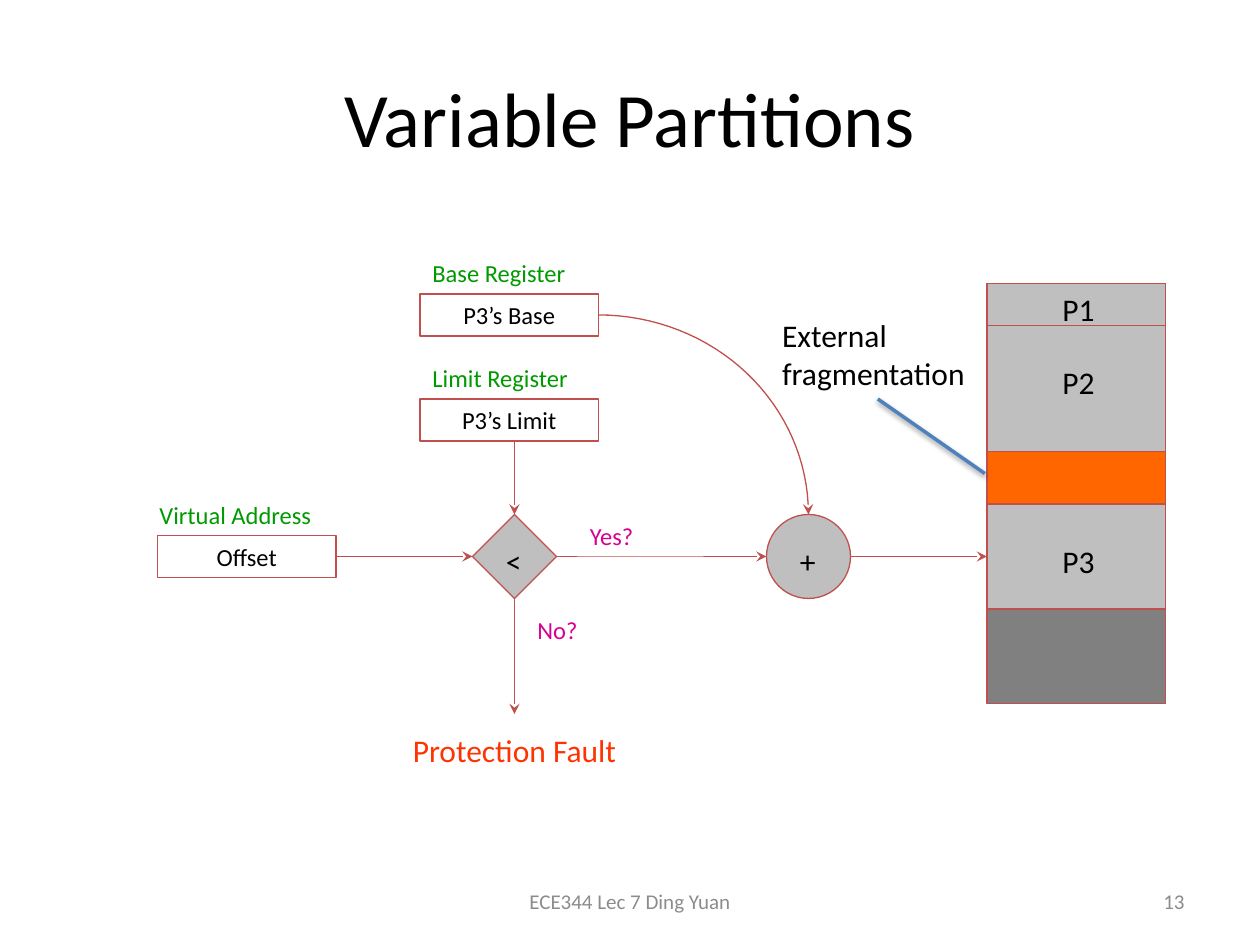
"""Builds a slide that explains variable partitions with base and limit registers."""
from math import cos, pi, sin

from lxml.etree import SubElement
from pptx import Presentation
from pptx.dml.color import RGBColor
from pptx.enum.shapes import MSO_CONNECTOR as Connector, MSO_SHAPE as Shape
from pptx.enum.text import MSO_ANCHOR as Anchor, PP_ALIGN as Align
from pptx.oxml.ns import qn
from pptx.util import Inches, Pt

COLORS = {
    "black": "000000", "white": "FFFFFF", "outline": "C0504D", "pointer": "4F81BD",
    "used": "BFBFBF", "free": "808080", "fragment": "FF6600", "register": "009900",
    "branch": "D60093", "fault": "FF3300", "footer": "8C8C8C",
}
COLUMNS, ROWS = 120, 90
WIDTH, HEIGHT = Inches(10), Inches(7.5)


class Diagram:
    """Holds the style and the slide; lengths are columns and rows of the grid."""

    font = "Calibri"
    line_width = Pt(0.75)

    def __init__(self, presentation):
        self.slide = presentation.slides.add_slide(presentation.slide_layouts[5])
        self.shapes = self.slide.shapes

    def x(self, columns):
        return round(WIDTH * columns / COLUMNS)

    def y(self, rows):
        return round(HEIGHT * rows / ROWS)

    def frame(self, left, top, width, height):
        return self.x(left), self.y(top), self.x(width), self.y(height)

    def color(self, name):
        return RGBColor.from_string(COLORS[name])

    def set_text(self, shape, text, size, color="black", align=Align.LEFT, anchor=Anchor.TOP, wrap=True):
        text_frame = shape.text_frame
        text_frame.text = text
        text_frame.word_wrap = wrap
        text_frame.vertical_anchor = anchor
        for paragraph in text_frame.paragraphs:
            paragraph.alignment = align
            paragraph.font.name = self.font
            paragraph.font.size = Pt(size)
            paragraph.font.color.rgb = self.color(color)

    def title(self, text):
        placeholder = self.shapes.title
        placeholder.left, placeholder.top, placeholder.width, placeholder.height = self.frame(6, 3.6, 108, 15)
        self.set_text(placeholder, text, 44, align=Align.CENTER, anchor=Anchor.MIDDLE)

    def label(self, frame, text, size=18, **style):
        self.set_text(self.shapes.add_textbox(*self.frame(*frame)), text, size, **style)

    def box(self, frame, fill="white", outlined=True, kind=Shape.RECTANGLE):
        shape = self.shapes.add_shape(kind, *self.frame(*frame))
        shape.shadow.inherit = False
        shape.fill.solid()
        shape.fill.fore_color.rgb = self.color(fill)
        if outlined:
            self.stroke(shape)
        else:
            shape.line.fill.background()
        return shape

    def register(self, left, top, text):
        self.set_text(self.box((left, top, 17, 4)), text, 14, align=Align.CENTER)

    def caption(self, frame, text, color, size=14, align=Align.LEFT):
        self.set_text(self.box(frame, outlined=False), text, size, color, align)

    def stroke(self, shape, color="outline", width=None):
        shape.line.color.rgb = self.color(color)
        shape.line.width = width or self.line_width

    def arrowhead(self, shape):
        outline = shape._element.spPr.find(qn("a:ln"))
        SubElement(outline, qn("a:tailEnd"), type="stealth")

    def connector(self, start, end, color="outline", width=None):
        line = self.shapes.add_connector(
            Connector.STRAIGHT, self.x(start[0]), self.y(start[1]), self.x(end[0]), self.y(end[1]))
        self.stroke(line, color, width)
        return line, SubElement(line._element.spPr, qn("a:effectLst"))

    def arrow(self, start, end):
        line, _ = self.connector(start, end)
        self.arrowhead(line)

    def pointer(self, start, end):
        _, effects = self.connector(start, end, "pointer", Pt(2))
        shadow = SubElement(effects, qn("a:outerShdw"), blurRad="40000", dist="20000",
                            dir="5400000", rotWithShape="0")
        black = SubElement(shadow, qn("a:srgbClr"), val=COLORS["black"])
        SubElement(black, qn("a:alpha"), val="38000")

    def curved_arrow(self, start, end, steps=32):
        (left, top), (right, bottom) = start, end
        angles = [pi / 2 * step / steps for step in range(1, steps + 1)]
        points = [(self.x(left + (right - left) * sin(angle)), self.y(bottom - (bottom - top) * cos(angle)))
                  for angle in angles]
        builder = self.shapes.build_freeform(self.x(left), self.y(top))
        builder.add_line_segments(points, close=False)
        curve = builder.convert_to_shape()
        curve.shadow.inherit = False
        curve.fill.background()
        self.stroke(curve)
        self.arrowhead(curve)


def main():
    presentation = Presentation()
    presentation.slide_width, presentation.slide_height = WIDTH, HEIGHT
    diagram = Diagram(presentation)
    diagram.title("Variable Partitions")
    diagram.label((41, 83.4, 38, 4.8), "ECE344 Lec 7 Ding Yuan", 12, color="footer",
                  align=Align.CENTER, anchor=Anchor.MIDDLE)
    diagram.label((86, 83.4, 28, 4.8), "13", 12, color="footer", align=Align.RIGHT, anchor=Anchor.MIDDLE)

    for top, height, fill in ((31, 12, "used"), (43, 8, "fragment"), (48, 10, "used"),
                              (58, 9, "free"), (27, 4, "used")):
        diagram.box((94, top, 17, height), fill)
    for top, name in ((27, "P1"), (34, "P2"), (51, "P3")):
        diagram.label((100, top, 6, 4.4), name)

    for left, top, indent, name, value in ((40, 28, 0, "Base Register", "P3’s Base"),
                                           (40, 38, 0, "Limit Register", "P3’s Limit"),
                                           (15, 51, -1, "Virtual Address", "Offset")):
        diagram.caption((left + indent, top - 4, 22, 4), name, "register")
        diagram.register(left, top, value)

    for left, kind, sign in ((73, Shape.OVAL, "+"), (45, Shape.DIAMOND, "<")):
        diagram.box((left, 49, 8, 8), "used", kind=kind)
        diagram.label((left + 2, 51, 6, 4.4), sign)

    diagram.arrow((53, 53), (73, 53))
    diagram.caption((55, 49, 12, 4), "Yes?", "branch")
    diagram.caption((50, 58, 12, 4), "No?", "branch")
    diagram.caption((38, 69, 22, 8.5), "Protection Fault", "fault", 18, Align.CENTER)
    for start, end in (((32, 53), (45, 53)), ((81, 53), (94, 53)),
                       ((49, 42), (49, 49)), ((49, 57), (49, 68))):
        diagram.arrow(start, end)
    diagram.curved_arrow((57, 30), (77, 49))

    diagram.label((73.3, 29.5, 20.5, 8.5), "External\nfragmentation", wrap=False)
    diagram.pointer((83.6, 38), (93.8, 45.1))
    presentation.save("out.pptx")


if __name__ == "__main__":
    main()
